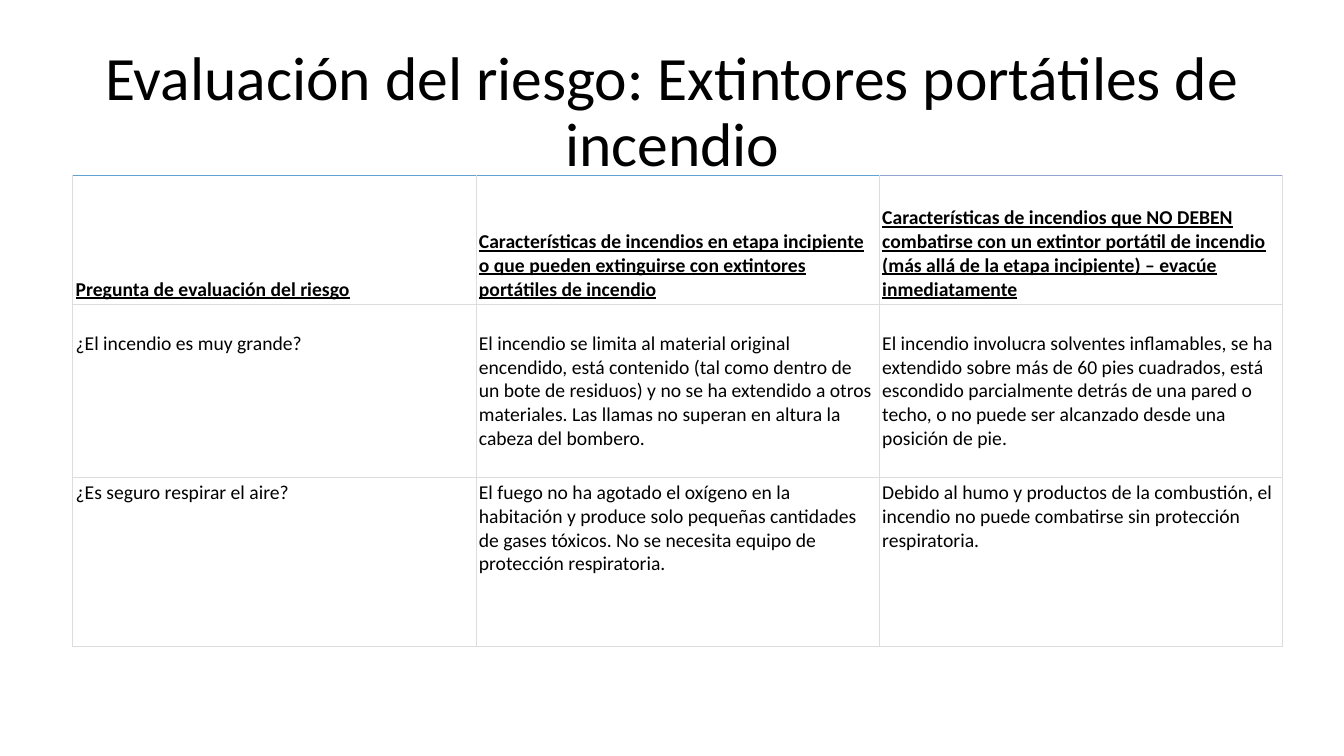
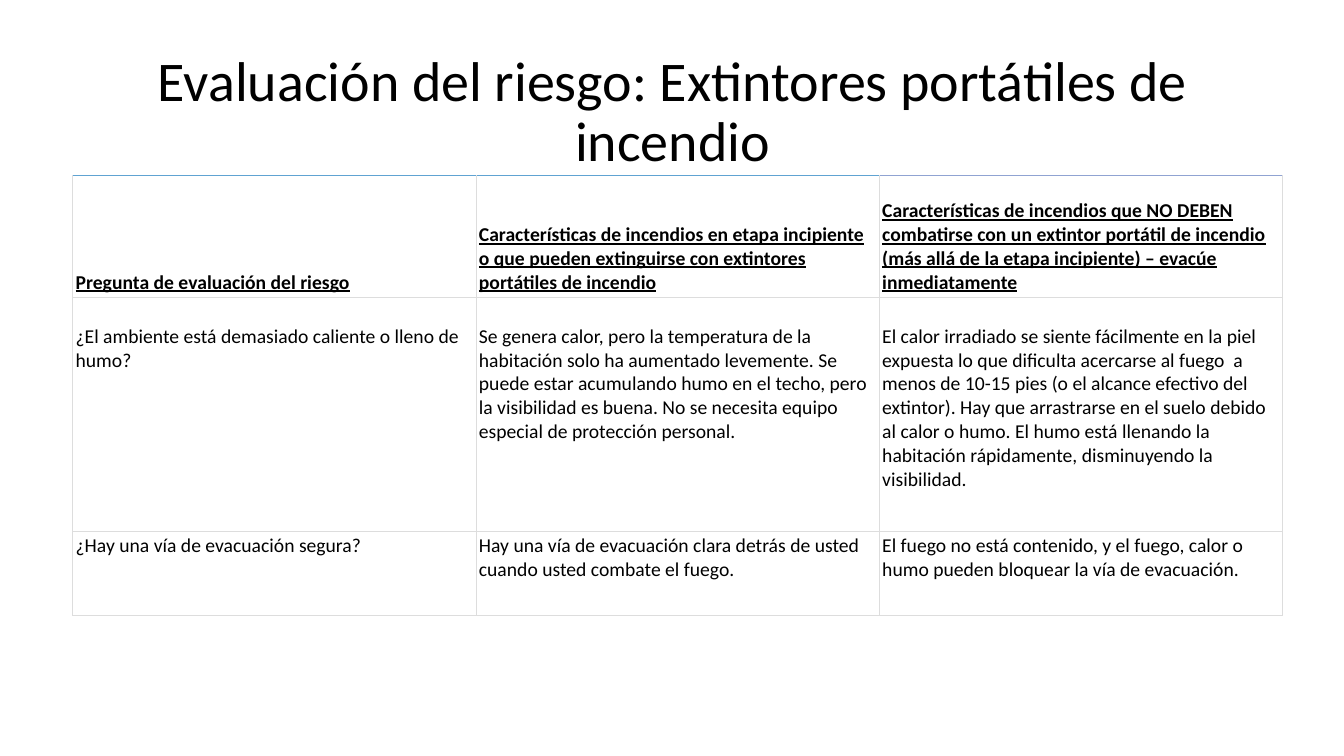
from dataclasses import dataclass

from lxml import etree
from pptx import Presentation, util as u
from pptx.dml.color import RGBColor
from pptx.enum import text
from pptx.oxml import ns

# Shared style
EMU_PER_PX = 9144  # 100 px to the inch
FONT = "Calibri"
BLACK = RGBColor(0x00, 0x00, 0x00)
WHITE = RGBColor(0xFF, 0xFF, 0xFF)
GRID = RGBColor(0xDD, 0xDD, 0xDD)
TOP_EDGES = (
    RGBColor(0x60, 0xA3, 0xD2),
    RGBColor(0x60, 0xA3, 0xD2),
    RGBColor(0x90, 0xA3, 0xD2),
)
CELL_SIZE = 14
BORDER_PT = 0.6
COL_WIDTH = 400
INSET = 3
FIRST_ROW_INSET = 27  # one line of air above the first question

TITLE = "Evaluación del riesgo: Extintores portátiles de incendio"
HEADERS = (
    "Pregunta de evaluación del riesgo",
    "Características de incendios en etapa incipiente o que pueden extinguirse "
    "con extintores portátiles de incendio",
    "Características de incendios que NO DEBEN combatirse con un extintor portátil "
    "de incendio (más allá de la etapa incipiente) – evacúe inmediatamente",
)


@dataclass(frozen=True)
class RiskSlide:
    title_size: int
    row_heights: tuple[int, ...]
    questions: tuple[tuple[str, str, str], ...]


SLIDES = (
    RiskSlide(44, (128, 172, 167), (
        ("¿El incendio es muy grande?",
         "El incendio se limita al material original encendido, está contenido (tal "
         "como dentro de un bote de residuos) y no se ha extendido a otros materiales. "
         "Las llamas no superan en altura la cabeza del bombero.",
         "El incendio involucra solventes inflamables, se ha extendido sobre más de 60 "
         "pies cuadrados, está escondido parcialmente detrás de una pared o techo, o no "
         "puede ser alcanzado desde una posición de pie."),
        ("¿Es seguro respirar el aire?",
         "El fuego no ha agotado el oxígeno en la habitación y produce solo pequeñas "
         "cantidades de gases tóxicos. No se necesita equipo de protección respiratoria.",
         "Debido al humo y productos de la combustión, el incendio no puede combatirse "
         "sin protección respiratoria."),
    )),
    RiskSlide(40, (121, 232, 84), (
        ("¿El ambiente está demasiado caliente o lleno de humo?",
         "Se genera calor, pero la temperatura de la habitación solo ha aumentado "
         "levemente. Se puede estar acumulando humo en el techo, pero la visibilidad es "
         "buena. No se necesita equipo especial de protección personal.",
         "El calor irradiado se siente fácilmente en la piel expuesta lo que dificulta "
         "acercarse al fuego  a menos de 10-15 pies (o el alcance efectivo del extintor). "
         "Hay que arrastrarse en el suelo debido al calor o humo. El humo está llenando "
         "la habitación rápidamente, disminuyendo la visibilidad."),
        ("¿Hay una vía de evacuación segura?",
         "Hay una vía de evacuación clara detrás de usted cuando usted combate el fuego.",
         "El fuego no está contenido, y el fuego, calor o humo pueden bloquear la vía de "
         "evacuación."),
    )),
)


def px(n: int) -> u.Emu:
    return u.Emu(n * EMU_PER_PX)


def style_font(font, size: int, heading: bool = False) -> None:
    font.name = FONT
    font.size = u.Pt(size)
    font.color.rgb = BLACK
    font.bold = heading
    font.underline = heading


def add_title(s, size: int) -> None:
    tf = s.shapes.add_textbox(px(92), px(40), px(1150), px(145)).text_frame
    tf.word_wrap = True
    tf.vertical_anchor = text.MSO_ANCHOR.MIDDLE
    p = tf.paragraphs[0]
    p.text = TITLE
    p.alignment = text.PP_ALIGN.CENTER
    p.line_spacing = 0.9
    style_font(p.runs[0].font, size)


def set_borders(cell, top: RGBColor) -> None:
    tc_pr = cell._tc.get_or_add_tcPr()
    for side, color in (("L", GRID), ("R", GRID), ("T", top), ("B", GRID)):
        ln = etree.SubElement(tc_pr, ns.qn(f"a:ln{side}"), w=str(u.Pt(BORDER_PT)))
        fill = etree.SubElement(ln, ns.qn("a:solidFill"))
        etree.SubElement(fill, ns.qn("a:srgbClr"), val=str(color))


def fill_cell(cell, words: str, row: int, col: int) -> None:
    heading = row == 0
    set_borders(cell, TOP_EDGES[col] if heading else GRID)
    cell.fill.solid()
    cell.fill.fore_color.rgb = WHITE
    cell.margin_left = cell.margin_right = cell.margin_bottom = px(INSET)
    cell.margin_top = px(FIRST_ROW_INSET if row == 1 else INSET)
    cell.vertical_anchor = text.MSO_ANCHOR.BOTTOM if heading else text.MSO_ANCHOR.TOP
    p = cell.text_frame.paragraphs[0]
    p.text = words
    style_font(p.runs[0].font, CELL_SIZE, heading)


def add_risk_table(s, risk: RiskSlide) -> None:
    rows = (HEADERS, *risk.questions)
    table = s.shapes.add_table(
        len(rows), len(HEADERS), px(72), px(174),
        px(COL_WIDTH * len(HEADERS)), px(sum(risk.row_heights)),
    ).table
    table.first_row = False
    table.horz_banding = False
    for i, (height, words) in enumerate(zip(risk.row_heights, rows)):
        table.rows[i].height = px(height)
        for j, cell_text in enumerate(words):
            fill_cell(table.cell(i, j), cell_text, i, j)


def main() -> None:
    prs = Presentation()
    prs.slide_width, prs.slide_height = px(1333), px(750)
    for risk in SLIDES:
        s = prs.slides.add_slide(prs.slide_layouts[6])
        add_title(s, risk.title_size)
        add_risk_table(s, risk)
    prs.save("out.pptx")


if __name__ == "__main__":
    main()
